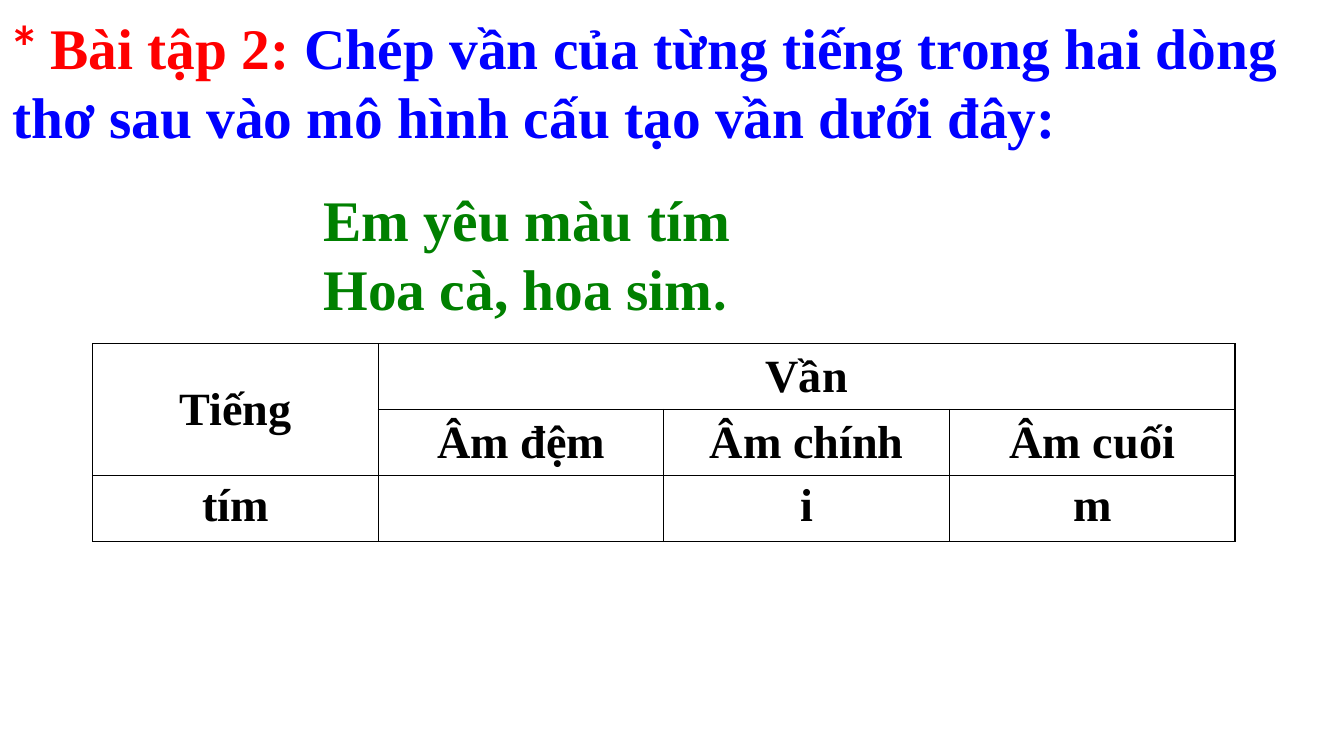
from pptx import Presentation
from pptx.dml.color import RGBColor
from pptx.enum import text
from pptx.oxml import parse_xml
from pptx.oxml.ns import nsdecls
from pptx.util import Inches, Pt

RED = RGBColor(0xFF, 0x00, 0x00)
BLUE = RGBColor(0x00, 0x00, 0xFF)
GREEN = RGBColor(0x00, 0x80, 0x00)
BLACK = RGBColor(0x00, 0x00, 0x00)
SERIF, SANS = "Times New Roman", "Lato"


def style(font, size, color, name=SERIF):
    font.name, font.size, font.bold = name, Pt(size), True
    font.color.rgb = color


def place(shape, left, top, width, height):
    shape.left, shape.top = Inches(left), Inches(top)
    shape.width, shape.height = Inches(width), Inches(height)


def add_span(para, words, color, name=SERIF):
    span = para.add_run()
    span.text = words
    style(span.font, 41, color, name)


def add_heading(page, *box):
    title = page.shapes.title
    place(title, *box)
    frame = title.text_frame
    frame.word_wrap = True
    frame.auto_size = text.MSO_AUTO_SIZE.NONE
    frame.vertical_anchor = text.MSO_ANCHOR.TOP
    para = frame.paragraphs[0]
    para.alignment = text.PP_ALIGN.LEFT
    para.line_spacing = 1.0
    add_span(para, "* ", RED, SANS)
    add_span(para, "Bài tập 2: ", RED)
    add_span(para, "Chép vần của từng tiếng trong hai dòng thơ sau "
                   "vào mô hình cấu tạo vần dưới đây:", BLUE)


def add_poem(page, *box):
    frame = page.shapes.add_textbox(*map(Inches, box)).text_frame
    frame.word_wrap = True
    add_span(frame.paragraphs[0], "Em yêu màu tím", GREEN)
    last_line = frame.add_paragraph()
    add_span(last_line, "Hoa cà, hoa sim", GREEN)
    add_span(last_line, ".", GREEN, SANS)


def add_borders(cell):
    properties = cell._tc.get_or_add_tcPr()
    for position, side in enumerate(("lnL", "lnR", "lnT", "lnB")):
        properties.insert(position, parse_xml(
            f'<a:{side} {nsdecls("a")} w="12700"><a:solidFill>'
            f'<a:srgbClr val="{BLACK}"/></a:solidFill></a:{side}>'))


def fill_cell(cell, words, is_header):
    cell.fill.background()
    add_borders(cell)
    cell.margin_left = cell.margin_right = Inches(0.13)
    cell.margin_top = cell.margin_bottom = Inches(0.05)
    para = cell.text_frame.paragraphs[0]
    para.alignment = text.PP_ALIGN.CENTER
    style(para.font, 33, BLACK)
    if words:
        para.text = words
    if is_header:
        cell.vertical_anchor = text.MSO_ANCHOR.MIDDLE
        # Hanging indent of the header cells
        indents = para._p.get_or_add_pPr()
        indents.set("marL", str(Inches(0.38)))
        indents.set("indent", str(-Inches(0.38)))


def add_rhyme_table(page, *box):
    rows = [
        ["Tiếng", "Vần", "", ""],
        ["", "Âm đệm", "Âm chính", "Âm cuối"],
        ["tím", "", "i", "m"],
    ]
    table = page.shapes.add_table(len(rows), len(rows[0]), *map(Inches, box)).table
    table.first_row = table.horz_banding = False
    for r, row in enumerate(rows):
        for c, words in enumerate(row):
            fill_cell(table.cell(r, c), words, is_header=r < 2)
    # Merged headers
    table.cell(0, 0).merge(table.cell(1, 0))
    table.cell(0, 1).merge(table.cell(0, 3))


def main():
    deck = Presentation()
    deck.slide_width, deck.slide_height = Inches(13.33), Inches(7.5)
    page = deck.slides.add_slide(deck.slide_layouts[5])
    add_heading(page, 0.02, 0.07, 13.15, 1.52)
    add_poem(page, 3.11, 1.78, 8.89, 1.52)
    add_rhyme_table(page, 0.92, 3.41, 11.33, 1.96)
    deck.save("out.pptx")


if __name__ == "__main__":
    main()
